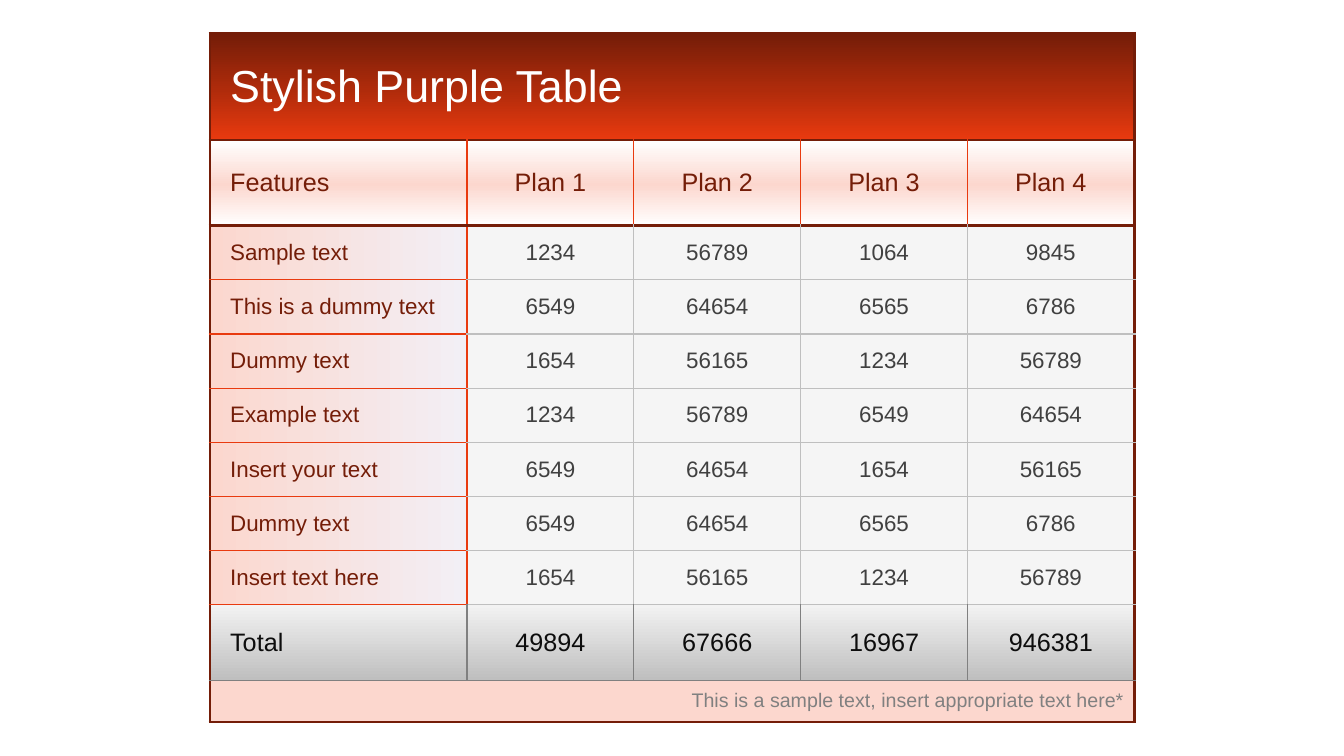
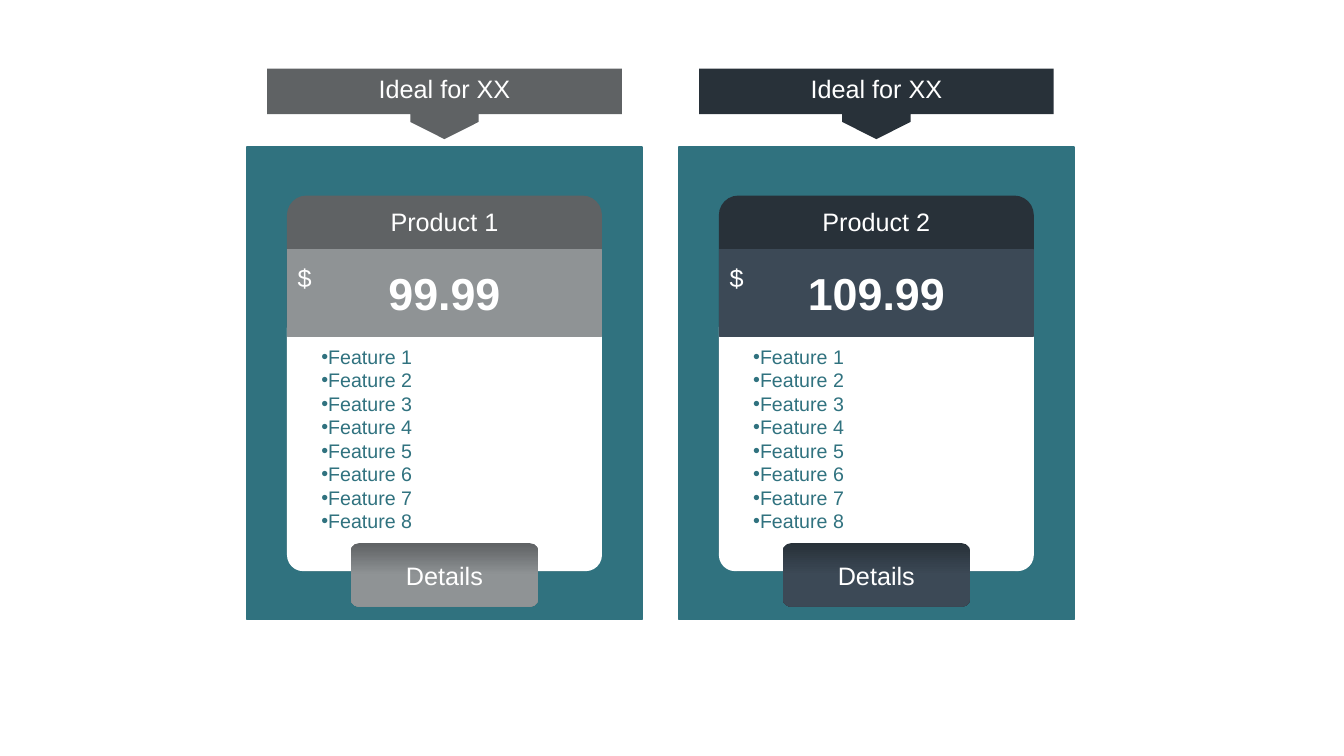
import dataclasses

import lxml.etree
import pptx
import pptx.dml.color
import pptx.enum.shapes
import pptx.enum.text
import pptx.oxml.ns
import pptx.util

Pt = pptx.util.Pt
qn = pptx.oxml.ns.qn
ALIGN = pptx.enum.text.PP_ALIGN
ANCHOR = pptx.enum.text.MSO_ANCHOR
SHAPE = pptx.enum.shapes.MSO_SHAPE


@dataclasses.dataclass(frozen=True)
class Theme:
    """Colours, gradients (angle, stops) and type sizes of the deck."""
    font: str = "Arial"
    white: str = "FFFFFF"
    maroon: str = "741D08"
    orange: str = "E93A0F"
    blush: str = "FCD7CE"
    cell: str = "F5F5F5"
    rule: str = "BFBFBF"
    grey: str = "808080"
    number: str = "404040"
    ink: str = "0D0D0D"
    teal: str = "30727F"
    title_band: tuple = (90, ((0, "741D08"), (53, "AF2B0B"), (100, "E93A0F")))
    header_band: tuple = (90, ((0, "FFFFFF"), (52, "FCD7CE"), (100, "FFFFFF")))
    feature_band: tuple = (0, ((0, "FCD7CE"), (100, "F2EFF5")))
    total_band: tuple = (90, ((0, "F2F2F2"), (100, "BFBFBF")))
    huge: float = 32
    large: float = 18
    medium: float = 16
    small: float = 14


THEME = Theme()

TABLE_TITLE = "Stylish Purple Table"
HEADER = ("Features", "Plan 1", "Plan 2", "Plan 3", "Plan 4")
BODY = (
    ("Sample text", "1234", "56789", "1064", "9845"),
    ("This is a dummy text", "6549", "64654", "6565", "6786"),
    ("Dummy text", "1654", "56165", "1234", "56789"),
    ("Example text", "1234", "56789", "6549", "64654"),
    ("Insert your text", "6549", "64654", "1654", "56165"),
    ("Dummy text", "6549", "64654", "6565", "6786"),
    ("Insert text here", "1654", "56165", "1234", "56789"),
)
TOTAL = ("Total", "49894", "67666", "16967", "946381")
TABLE_NOTE = "This is a sample text, insert appropriate text here*"

CARDS = (
    {"name": "Product 1", "price": "99.99", "dark": "5F6264", "light": "8F9395"},
    {"name": "Product 2", "price": "109.99", "dark": "283139", "light": "3C4956"},
)
BANNER = "Ideal for XX"
CURRENCY = "$"
BUTTON = "Details"
FEATURES = [f"Feature {number}" for number in range(1, 9)]

TABLE_LEFT, TABLE_TOP = 150, 23.8
COLUMN_WIDTHS = [183.6] + [119.15] * 4
ROW_HEIGHTS = [76.3, 61.1] + [38.7] * len(BODY) + [53.8, 30]

CARD_LEFT, CARD_TOP, CARD_PITCH = 176.4, 105.1, 308.5
CARD_WIDTH, CARD_HEIGHT = 282.2, 337.5
INNER_WIDTH, BUTTON_WIDTH, BANNER_WIDTH = 224, 133.9, 253.4


def rgb(color):
    """Return a colour object for a hex string."""
    return pptx.dml.color.RGBColor.from_string(color)


def write(frame, text, *, size, color, align=ALIGN.LEFT, bold=False, bullet=None):
    """Fill a text frame with one paragraph for each line of text."""
    for index, line in enumerate(text.split("\n")):
        para = frame.add_paragraph() if index else frame.paragraphs[0]
        para.alignment = align
        span = para.add_run()
        span.text = line
        span.font.name = THEME.font
        span.font.size = Pt(size)
        span.font.bold = bold
        span.font.color.rgb = rgb(color)
        if bullet:
            properties = para._p.get_or_add_pPr()
            properties.set("marL", "0")
            properties.set("indent", str(Pt(13.7)))
            lxml.etree.SubElement(properties, qn("a:buFont")).set("typeface", THEME.font)
            lxml.etree.SubElement(properties, qn("a:buChar")).set("char", bullet)


def paint(fill, element, look):
    """Apply a solid colour or a gradient to a fill of the given element."""
    if isinstance(look, str):
        fill.solid()
        fill.fore_color.rgb = rgb(look)
        return
    angle, stops = look
    fill.gradient()
    fill.gradient_angle = -angle % 360
    stop_list = next(element.iter(qn("a:gsLst")))
    for old in list(stop_list):
        stop_list.remove(old)
    for position, color in stops:
        stop = lxml.etree.SubElement(stop_list, qn("a:gs"), pos=str(position * 1000))
        lxml.etree.SubElement(stop, qn("a:srgbClr"), val=color)


def horizontal_rule(line, column):
    """Return the colour of a table's horizontal line at a column."""
    last = len(ROW_HEIGHTS)
    if line in (0, 1, 2, last):
        return THEME.maroon
    if line == last - 1:
        return THEME.grey
    return THEME.rule if column else THEME.orange


def vertical_rule(row, line):
    """Return the colour of a table's vertical line at a row."""
    last = len(ROW_HEIGHTS) - 1
    if line in (0, len(COLUMN_WIDTHS)) or row in (0, last):
        return THEME.maroon
    if row == last - 1:
        return THEME.grey
    return THEME.orange if row == 1 or line == 1 else THEME.rule


def add_borders(cell, row, column):
    """Draw the four sides of a table cell."""
    properties = cell._tc.get_or_add_tcPr()
    sides = {
        "L": vertical_rule(row, column),
        "R": vertical_rule(row, column + 1),
        "T": horizontal_rule(row, column),
        "B": horizontal_rule(row + 1, column),
    }
    for side, color in sides.items():
        width = Pt(2.25 if color == THEME.maroon else 1)
        line = lxml.etree.SubElement(properties, qn(f"a:ln{side}"), w=str(width))
        solid = lxml.etree.SubElement(line, qn("a:solidFill"))
        lxml.etree.SubElement(solid, qn("a:srgbClr"), val=color)


def build_table(page):
    """Build the plan comparison table."""
    blanks = ("",) * (len(HEADER) - 1)
    rows = [(TABLE_TITLE, *blanks), HEADER, *BODY, TOTAL, (TABLE_NOTE, *blanks)]
    last = len(rows) - 1
    title = (THEME.title_band, THEME.huge, THEME.white)
    header = (THEME.header_band, THEME.large, THEME.maroon)
    feature = (THEME.feature_band, THEME.medium, THEME.maroon)
    number = (THEME.cell, THEME.medium, THEME.number)
    total = (THEME.total_band, THEME.large, THEME.ink)
    note = (THEME.blush, THEME.small, THEME.grey)
    row_styles = {0: title, 1: header, last - 1: total, last: note}

    table = page.shapes.add_table(
        len(rows), len(HEADER), Pt(TABLE_LEFT), Pt(TABLE_TOP),
        Pt(sum(COLUMN_WIDTHS)), Pt(sum(ROW_HEIGHTS))).table
    table.first_row = table.horz_banding = False
    for column, width in zip(table.columns, COLUMN_WIDTHS):
        column.width = Pt(width)
    for row, height in zip(table.rows, ROW_HEIGHTS):
        row.height = Pt(height)
    for row in (0, last):
        table.cell(row, 0).merge(table.cell(row, len(HEADER) - 1))

    for row, values in enumerate(rows):
        for column, text in enumerate(values):
            cell = table.cell(row, column)
            look, size, color = row_styles.get(row, number if column else feature)
            add_borders(cell, row, column)
            paint(cell.fill, cell._tc, look)
            cell.vertical_anchor = ANCHOR.MIDDLE
            if cell.is_spanned:
                continue
            align = ALIGN.CENTER if column else ALIGN.LEFT
            if row == last:
                align = ALIGN.RIGHT
            elif not column:
                cell.margin_left = Pt(14.4)
            write(cell.text_frame, text, size=size, color=color, align=align)


def add_block(page, kind, left, top, width, height, look, *, radius=None,
              outline=True, anchor=ANCHOR.MIDDLE):
    """Add a filled preset shape, outlined in its own colour if asked."""
    box = page.shapes.add_shape(kind, Pt(left), Pt(top), Pt(width), Pt(height))
    box.shadow.inherit = False
    if radius is not None:
        box.adjustments[0] = radius
    paint(box.fill, box._element, look)
    if outline:
        box.line.color.rgb = rgb(look)
        box.line.width = Pt(1)
    else:
        box.line.fill.background()
    box.text_frame.word_wrap = True
    box.text_frame.vertical_anchor = anchor
    return box


def add_banner(page, center, color):
    """Add the banner whose pointer aims at the card below."""
    top, bar, shoulder, tip = 49, 81.6, 87.1, 99.4
    half, pointer = BANNER_WIDTH / 2, 24.4
    right_side = [(half, top), (half, bar), (pointer, bar), (pointer, shoulder)]
    left_side = [(-x, y) for x, y in reversed(right_side)]
    points = [(Pt(center + x), Pt(y)) for x, y in right_side + [(0, tip)] + left_side]
    builder = page.shapes.build_freeform(*points[0])
    builder.add_line_segments(points[1:], close=True)
    banner = builder.convert_to_shape()
    banner.shadow.inherit = False
    paint(banner.fill, banner._element, color)
    banner.line.fill.background()
    banner.text_frame.word_wrap = True
    banner.text_frame.vertical_anchor = ANCHOR.TOP
    write(banner.text_frame, BANNER, size=THEME.large, color=THEME.white,
          align=ALIGN.CENTER)


def build_card(page, left, card):
    """Build one pricing card with its banner and button."""
    center = left + CARD_WIDTH / 2
    inner = center - INNER_WIDTH / 2
    label = {"size": THEME.large, "color": THEME.white, "align": ALIGN.CENTER}
    rounded = SHAPE.ROUNDED_RECTANGLE

    add_block(page, SHAPE.RECTANGLE, left, CARD_TOP, CARD_WIDTH, CARD_HEIGHT, THEME.teal)
    heading = add_block(page, rounded, inner, 140.2, INNER_WIDTH, 267.3, card["dark"],
                        radius=0.06, anchor=ANCHOR.TOP)
    write(heading.text_frame, card["name"], **label)

    features = add_block(page, rounded, inner, 223.2, INNER_WIDTH, 184.3, THEME.white,
                         radius=0.06, anchor=ANCHOR.TOP)
    features.text_frame.margin_top = Pt(19.7)
    write(features.text_frame, "\n".join(FEATURES), size=THEME.small,
          color=THEME.teal, bullet="•")

    price = add_block(page, SHAPE.RECTANGLE, inner, 178.2, INNER_WIDTH, 62, card["light"])
    write(price.text_frame, card["price"], size=THEME.huge, color=THEME.white,
          align=ALIGN.CENTER, bold=True)

    shading = (90, ((0, card["dark"]), (50, card["light"])))
    button = add_block(page, rounded, center - BUTTON_WIDTH / 2, 388, BUTTON_WIDTH, 45.4,
                       shading, radius=0.13, outline=False)
    write(button.text_frame, BUTTON, **label)

    currency = page.shapes.add_textbox(Pt(inner), Pt(183.6), Pt(32.4), Pt(28.8))
    currency.text_frame.word_wrap = False
    write(currency.text_frame, CURRENCY, size=THEME.large, color=THEME.white)
    add_banner(page, center, card["dark"])


def main():
    """Build and save the deck."""
    deck = pptx.Presentation()
    deck.slide_width, deck.slide_height = Pt(960), Pt(540)
    blank = deck.slide_layouts[6]
    build_table(deck.slides.add_slide(blank))
    pricing = deck.slides.add_slide(blank)
    for index, card in enumerate(CARDS):
        build_card(pricing, CARD_LEFT + index * CARD_PITCH, card)
    deck.save("out.pptx")


if __name__ == "__main__":
    main()
